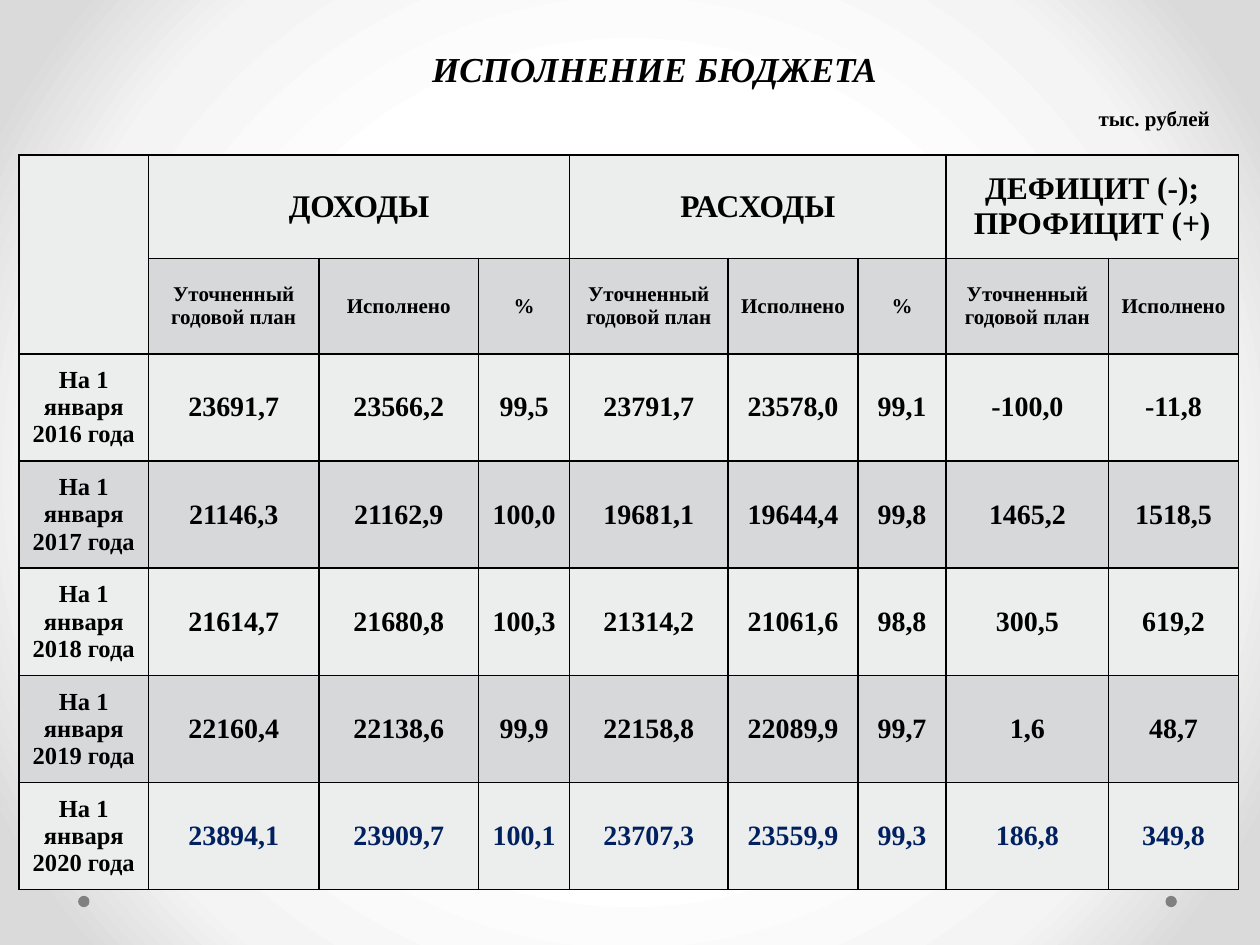
from dataclasses import dataclass

from lxml import etree
from pptx import Presentation
from pptx import util as u
from pptx.dml.color import RGBColor
from pptx.enum import shapes, text
from pptx.oxml.ns import qn


@dataclass(frozen=True)
class Theme:
    """Colours, font and type sizes of the budget slide."""

    font: str = "Times New Roman"
    ink: str = "000000"
    accent: str = "002060"
    bands: tuple = ("ECEDED", "D6D8D9")
    dot: str = "808080"
    backdrop: tuple = ((50, "FFFFFF"), (76, "F4F4F4"), (92, "DADADA"))
    title: int = 20
    group: int = 18
    value: int = 16
    period: int = 14
    label: int = 12
    border: int = 1


class BudgetSlide:
    """Holds the theme and the current page and adds elements to it."""

    def __init__(self, deck, theme):
        self.theme = theme
        self.page = deck.slides.add_slide(deck.slide_layouts[5])

    def format_text(self, frame, size, color=None, align=text.PP_ALIGN.CENTER, italic=False):
        """Apply the bold slide font to every paragraph of a frame."""
        for para in frame.paragraphs:
            para.alignment = align
            for span in para.runs:
                font = span.font
                font.name = self.theme.font
                font.size = u.Pt(size)
                font.bold = True
                font.italic = italic
                font.color.rgb = RGBColor.from_string(color or self.theme.ink)

    def background(self):
        """Paint a circular gradient around the slide centre."""
        self.page.background.fill.gradient()
        gradient = next(self.page._element.iter(qn("a:gradFill")))
        for child in list(gradient):
            gradient.remove(child)
        stops = etree.SubElement(gradient, qn("a:gsLst"))
        for position, color in self.theme.backdrop:
            stop = etree.SubElement(stops, qn("a:gs"), pos=str(position * 1000))
            etree.SubElement(stop, qn("a:srgbClr"), val=color)
        circle = etree.SubElement(gradient, qn("a:path"), {"path": "circle"})
        etree.SubElement(circle, qn("a:fillToRect"), {side: "50000" for side in "ltrb"})

    def dot(self, left, top, size):
        """Add a small round ornament."""
        shape = self.page.shapes.add_shape(
            shapes.MSO_SHAPE.OVAL, u.Inches(left), u.Inches(top), u.Inches(size), u.Inches(size))
        shape.shadow.inherit = False
        shape.fill.solid()
        shape.fill.fore_color.rgb = RGBColor.from_string(self.theme.dot)
        shape.line.fill.background()

    def title(self, wording, left, top, width, height):
        """Place and format the title placeholder."""
        box = self.page.shapes.title
        box.left, box.top = u.Inches(left), u.Inches(top)
        box.width, box.height = u.Inches(width), u.Inches(height)
        box.text_frame.text = wording
        box.text_frame.auto_size = text.MSO_AUTO_SIZE.NONE
        self.format_text(box.text_frame, self.theme.title, italic=True)

    def note(self, wording, left, top, width, height):
        """Add a small left-aligned text box."""
        box = self.page.shapes.add_textbox(
            u.Inches(left), u.Inches(top), u.Inches(width), u.Inches(height))
        box.text_frame.word_wrap = True
        box.text_frame.text = wording
        self.format_text(box.text_frame, self.theme.label, align=text.PP_ALIGN.LEFT)

    def border(self, cell):
        """Draw a solid line on all four sides of a cell."""
        properties = cell._tc.get_or_add_tcPr()
        for side in ("lnL", "lnR", "lnT", "lnB"):
            line = etree.SubElement(
                properties, qn(f"a:{side}"), w=str(u.Pt(self.theme.border)))
            fill = etree.SubElement(line, qn("a:solidFill"))
            etree.SubElement(fill, qn("a:srgbClr"), val=self.theme.ink)

    def cell_style(self, row, column, last_row):
        """Return the type size and colour for a table position."""
        theme = self.theme
        if row < 2:
            return (theme.group, theme.label)[row], theme.ink
        if column == 0:
            return theme.period, theme.ink
        return theme.value, theme.accent if row == last_row else theme.ink

    def table(self, rows, widths, heights, merges, left, top):
        """Add a banded table with merged header cells."""
        table = self.page.shapes.add_table(
            len(rows), len(widths), u.Inches(left), u.Inches(top),
            u.Inches(sum(widths)), u.Inches(sum(heights))).table
        for column, width in zip(table.columns, widths):
            column.width = u.Inches(width)
        for row, height in zip(table.rows, heights):
            row.height = u.Inches(height)
        for r, values in enumerate(rows):
            for c, value in enumerate(values):
                cell = table.cell(r, c)
                self.border(cell)
                cell.fill.solid()
                cell.fill.fore_color.rgb = RGBColor.from_string(self.theme.bands[r % 2])
                cell.vertical_anchor = text.MSO_ANCHOR.MIDDLE
                cell.text_frame.text = value
                self.format_text(cell.text_frame, *self.cell_style(r, c, len(rows) - 1))
        for start, end in merges:
            table.cell(*start).merge(table.cell(*end))


PLAN, DONE, SHARE = "Уточненный годовой план", "Исполнено", "%"
GROUPS = ["", "ДОХОДЫ", "", "", "РАСХОДЫ", "", "", "ДЕФИЦИТ (-);\nПРОФИЦИТ (+)", ""]
LABELS = ["", PLAN, DONE, SHARE, PLAN, DONE, SHARE, PLAN, DONE]
RESULTS = {
    2016: "23691,7 23566,2 99,5 23791,7 23578,0 99,1 -100,0 -11,8",
    2017: "21146,3 21162,9 100,0 19681,1 19644,4 99,8 1465,2 1518,5",
    2018: "21614,7 21680,8 100,3 21314,2 21061,6 98,8 300,5 619,2",
    2019: "22160,4 22138,6 99,9 22158,8 22089,9 99,7 1,6 48,7",
    2020: "23894,1 23909,7 100,1 23707,3 23559,9 99,3 186,8 349,8",
}
WIDTHS = [1.03, 1.35, 1.27, 0.72, 1.26, 1.03, 0.7, 1.29, 1.03]
HEIGHTS = [0.82, 0.76] + [0.85] * len(RESULTS)
MERGES = [((0, 0), (1, 0)), ((0, 1), (0, 3)), ((0, 4), (0, 6)), ((0, 7), (0, 8))]


def main():
    """Build the budget slide and save it."""
    deck = Presentation()
    deck.slide_width, deck.slide_height = u.Inches(10), u.Inches(7.5)
    slide = BudgetSlide(deck, Theme())
    slide.background()
    for left in (0.62, 9.25):
        slide.dot(left, 7.11, 0.09)
    periods = [[f"На 1 января {year} года", *values.split()] for year, values in RESULTS.items()]
    slide.table([GROUPS, LABELS, *periods], WIDTHS, HEIGHTS, MERGES, 0.15, 1.23)
    slide.title("ИСПОЛНЕНИЕ БЮДЖЕТА", 3.11, 0.32, 4.17, 0.44)
    slide.note("тыс. рублей", 8.62, 0.79, 1.18, 0.3)
    deck.save("out.pptx")


if __name__ == "__main__":
    main()
